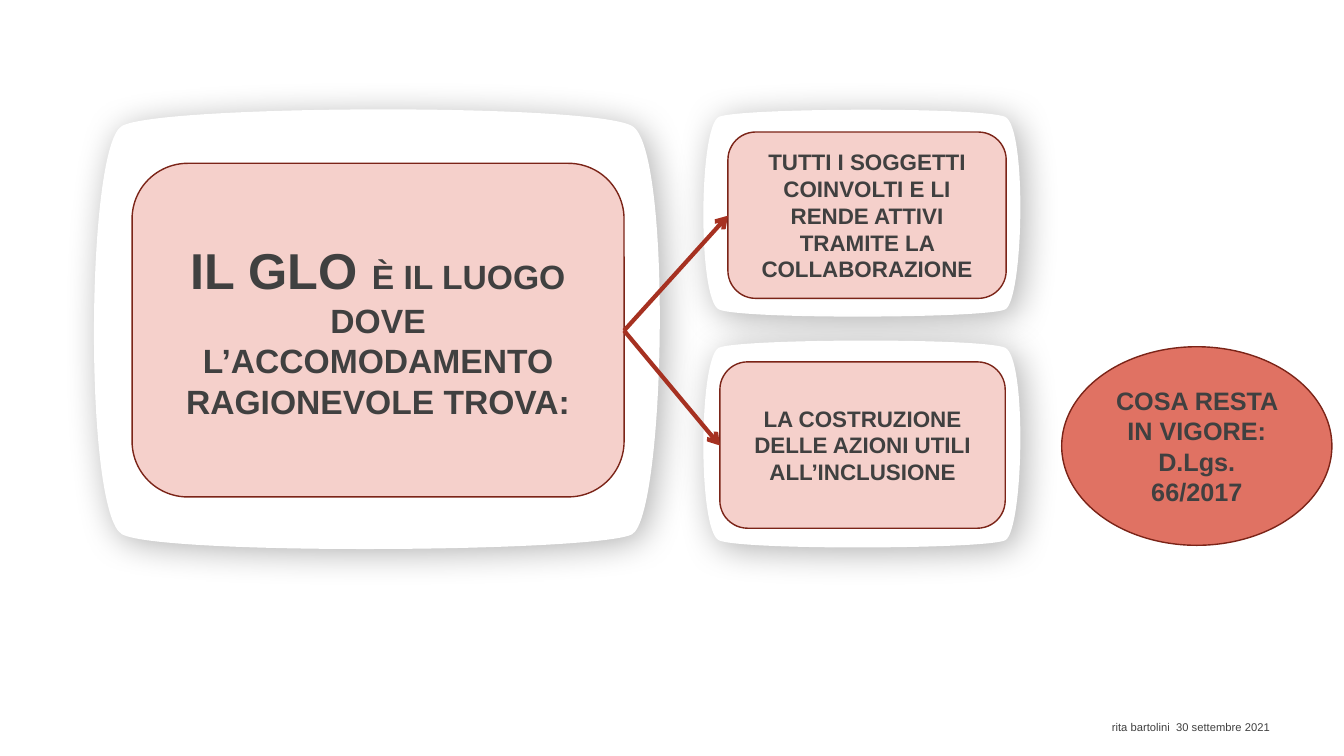
"""Build the slide on the GLO as the place of reasonable accommodation."""
from lxml.etree import SubElement
from pptx import Presentation
from pptx.dml.color import RGBColor
from pptx.enum.shapes import MSO_CONNECTOR as Connector, MSO_SHAPE as Shape
from pptx.enum.text import MSO_ANCHOR as Anchor, PP_ALIGN as Align
from pptx.oxml.ns import qn
from pptx.util import Pt

PX = 9144
COLORS = {
    "panel": "FFFFFF",
    "pink": "F5D0CB",
    "coral": "E07263",
    "outline": "7B2418",
    "arrow": "A63121",
    "text": "404040",
    "shadow": "000000",
}


def rgb(name):
    return RGBColor.from_string(COLORS[name])


def write(para, spans, bold):
    for text, size in spans:
        span = para.add_run()
        span.text = text
        span.font.name = "Arial"
        span.font.size = Pt(size)
        span.font.bold = bold
        span.font.color.rgb = rgb("text")


deck = Presentation()
deck.slide_width, deck.slide_height = 1333 * PX, 750 * PX
page = deck.slides.add_slide(deck.slide_layouts[6])

large_panel = [
    (627, 125), (667, 147), (660, 511), (627, 530), (594, 548), (159, 551),
    (121, 530), (83, 508), (85, 145), (121, 125), (157, 104), (587, 102), (627, 125),
]
upper_panel = [
    (997, 116), (1019, 127), (1015, 298), (997, 307), (978, 316), (734, 317),
    (713, 307), (692, 297), (693, 126), (713, 116), (733, 107), (974, 106), (997, 116),
]
lower_panel = [(x, y + 229) for x, y in upper_panel]

for points in (large_panel, upper_panel, lower_panel):
    start, *others = [(x * PX, y * PX) for x, y in points]
    builder = page.shapes.build_freeform(*start)
    builder.add_line_segments(others, close=True)
    panel = builder.convert_to_shape()
    panel.fill.solid()
    panel.fill.fore_color.rgb = rgb("panel")
    panel.line.fill.background()

    segments = list(panel.element.iter(qn("a:lnTo")))
    for first in range(0, 12, 3):
        curve = segments[first]
        route = curve.getparent()
        bezier = SubElement(route, qn("a:cubicBezTo"))
        curve.addprevious(bezier)
        for segment in segments[first:first + 3]:
            bezier.append(segment[0])
            route.remove(segment)

    panel.shadow.inherit = False
    effects = panel.element.spPr.find(qn("a:effectLst"))
    shadow = SubElement(effects, qn("a:outerShdw"), blurRad=str(Pt(25)),
                        dist=str(Pt(5)), dir="2700000", algn="ctr", rotWithShape="0")
    tint = SubElement(shadow, qn("a:srgbClr"), val=COLORS["shadow"])
    SubElement(tint, qn("a:alpha"), val="30000")

footer = page.shapes.add_textbox(1093 * PX, 710 * PX, 240 * PX, 40 * PX)
footer.text_frame.word_wrap = True
write(footer.text_frame.paragraphs[0], [("rita bartolini  30 settembre 2021", 8)], False)

boxes = [
    (Shape.ROUNDED_RECTANGLE, (131, 162, 488, 331), "pink",
     [("IL GLO ", 36), ("È IL LUOGO DOVE L’ACCOMODAMENTO RAGIONEVOLE TROVA:", 24)]),
    (Shape.OVAL, (1053, 344, 268, 197), "coral",
     [("COSA RESTA IN VIGORE: D.Lgs. 66/2017", 18)]),
    (Shape.ROUNDED_RECTANGLE, (722, 131, 276, 165), "pink",
     [("TUTTI I SOGGETTI COINVOLTI E LI RENDE ATTIVI TRAMITE LA COLLABORAZIONE", 16)]),
    (Shape.ROUNDED_RECTANGLE, (714, 359, 283, 165), "pink",
     [("LA COSTRUZIONE DELLE AZIONI UTILI ALL’INCLUSIONE", 16)]),
]
for kind, place, fill, spans in boxes:
    box = page.shapes.add_shape(kind, *(length * PX for length in place))
    box.shadow.inherit = False
    box.fill.solid()
    box.fill.fore_color.rgb = rgb(fill)
    box.line.color.rgb = rgb("outline")
    box.line.width = Pt(1)
    box.text_frame.word_wrap = True
    box.text_frame.vertical_anchor = Anchor.MIDDLE
    para = box.text_frame.paragraphs[0]
    para.alignment = Align.CENTER
    write(para, spans, True)

for end_x, end_y in ((722, 214), (714, 442)):
    arrow = page.shapes.add_connector(
        Connector.STRAIGHT, 619 * PX, 328 * PX, end_x * PX, end_y * PX)
    arrow.line.color.rgb = rgb("arrow")
    arrow.line.width = Pt(3)
    properties = arrow.element.spPr
    SubElement(properties.find(qn("a:ln")), qn("a:tailEnd"), type="arrow")
    SubElement(properties, qn("a:effectLst"))

deck.save("out.pptx")
